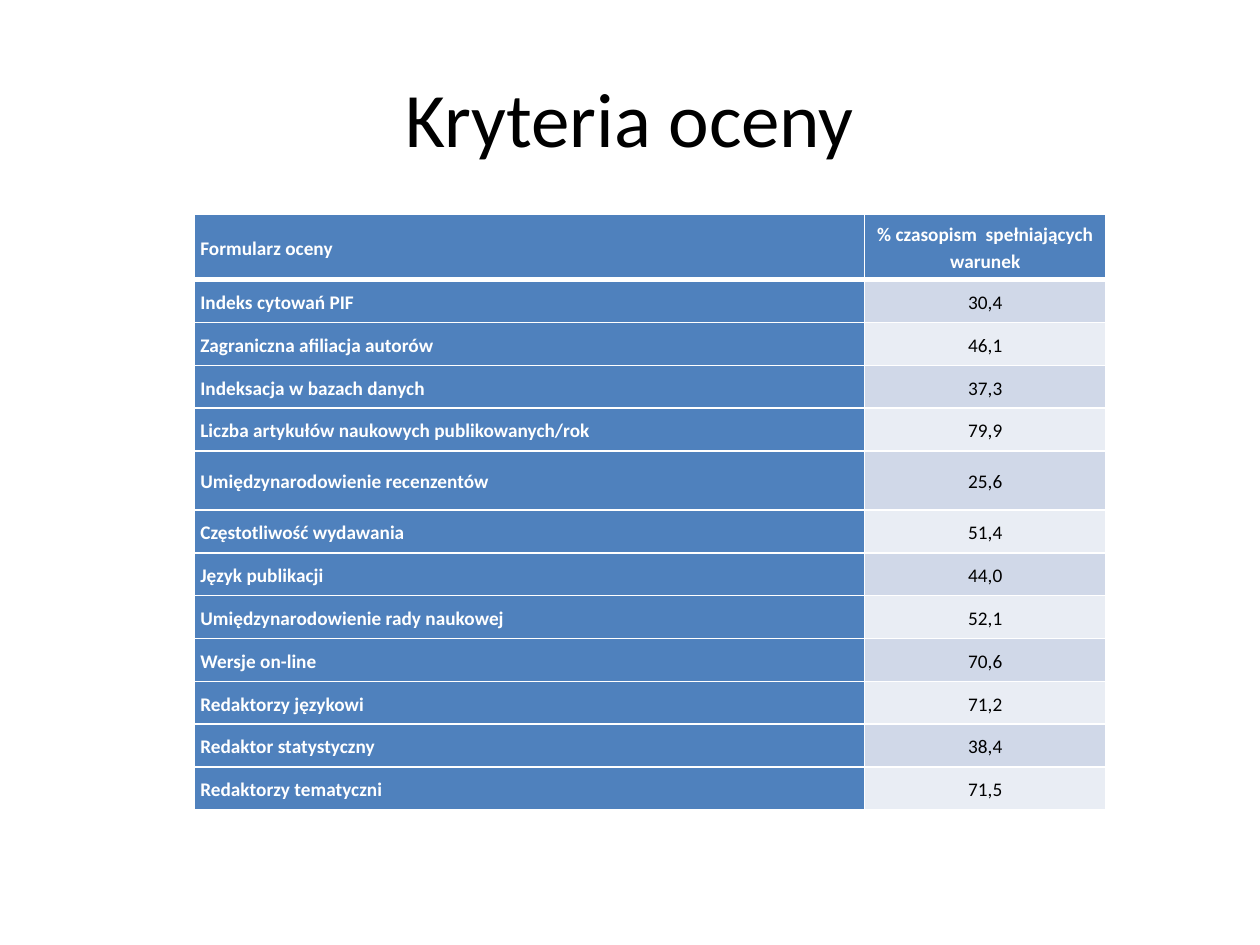
from typing import NamedTuple

from lxml import etree
from pptx import Presentation
from pptx.dml.color import RGBColor
from pptx.enum.text import MSO_ANCHOR, PP_ALIGN
from pptx.oxml.ns import qn
from pptx.util import Inches, Pt

LEFT, CENTER = PP_ALIGN.LEFT, PP_ALIGN.CENTER
MIDDLE = MSO_ANCHOR.MIDDLE
FONT = "Calibri"
COLORS = {
    "blue": "4F81BD",
    "dark": "D0D8E8",
    "light": "E9EDF4",
    "white": "FFFFFF",
    "black": "000000",
}
WIDTHS = (5.32, 1.92)
ROW = 0.34


class Row(NamedTuple):
    label: str
    value: str
    height: float = ROW


class Look(NamedTuple):
    fill: str
    color: str
    bold: bool
    align: PP_ALIGN


HEAD = Row("Formularz oceny", "% czasopism  spełniających warunek", 0.52)
ROWS = [
    Row("Indeks cytowań PIF", "30,4"),
    Row("Zagraniczna afiliacja autorów", "46,1"),
    Row("Indeksacja w bazach danych", "37,3"),
    Row("Liczba artykułów naukowych publikowanych/rok", "79,9"),
    Row("Umiędzynarodowienie recenzentów", "25,6", 0.47),
    Row("Częstotliwość wydawania", "51,4"),
    Row("Język publikacji", "44,0"),
    Row("Umiędzynarodowienie rady naukowej", "52,1"),
    Row("Wersje on-line", "70,6"),
    Row("Redaktorzy językowi", "71,2"),
    Row("Redaktor statystyczny", "38,4"),
    Row("Redaktorzy tematyczni", "71,5"),
]

LABEL = Look("blue", "white", True, LEFT)
TITLE = Look("blue", "white", True, CENTER)
BANDS = [Look(fill, "black", False, CENTER) for fill in ("dark", "light")]


def write(para, text: str, size: float, color: str, bold: bool, align) -> None:
    para.alignment = align
    run = para.add_run()
    run.text = text
    font = run.font
    font.name, font.size, font.bold = FONT, Pt(size), bold
    font.color.rgb = RGBColor.from_string(COLORS[color])


def edge(cell, top: float, bottom: float) -> None:
    """Draw white cell borders; must run before the fill is set."""
    props = cell._tc.get_or_add_tcPr()
    for side, width in (("L", 1), ("R", 1), ("T", top), ("B", bottom)):
        line = etree.SubElement(props, qn(f"a:ln{side}"), w=str(Pt(width)))
        fill = etree.SubElement(line, qn("a:solidFill"))
        etree.SubElement(fill, qn("a:srgbClr"), val=COLORS["white"])


def draw_cell(cell, text: str, look: Look, top: float, bottom: float) -> None:
    edge(cell, top, bottom)
    cell.fill.solid()
    cell.fill.fore_color.rgb = RGBColor.from_string(COLORS[look.fill])
    cell.vertical_anchor = MIDDLE
    cell.margin_left = cell.margin_right = Inches(0.05)
    cell.margin_top = cell.margin_bottom = 0
    para = cell.text_frame.paragraphs[0]
    para.line_spacing = 1.15
    write(para, text, 11, look.color, look.bold, look.align)


def draw_table(slide) -> None:
    rows = [HEAD, *ROWS]
    table = slide.shapes.add_table(
        len(rows), len(WIDTHS), Inches(1.54), Inches(1.7),
        Inches(sum(WIDTHS)), Inches(sum(row.height for row in rows)),
    ).table
    table.first_col = True
    for col, width in zip(table.columns, WIDTHS):
        col.width = Inches(width)
    for i, row in enumerate(rows):
        table.rows[i].height = Inches(row.height)
        top = 3 if i == 1 else 1
        bottom = 3 if i == 0 else 1
        look = BANDS[(i - 1) % 2] if i else TITLE
        draw_cell(table.cell(i, 0), row.label, LABEL, top, bottom)
        draw_cell(table.cell(i, 1), row.value, look, top, bottom)


def draw_title(slide) -> None:
    box = slide.shapes.add_textbox(
        Inches(0.5), Inches(0.3), Inches(9), Inches(1.25))
    frame = box.text_frame
    frame.word_wrap = True
    frame.vertical_anchor = MIDDLE
    write(frame.paragraphs[0], "Kryteria oceny", 44, "black", False, CENTER)


def main() -> None:
    deck = Presentation()
    deck.slide_width, deck.slide_height = Inches(10), Inches(7.5)
    slide = deck.slides.add_slide(deck.slide_layouts[6])
    draw_title(slide)
    draw_table(slide)
    deck.save("out.pptx")


if __name__ == "__main__":
    main()
